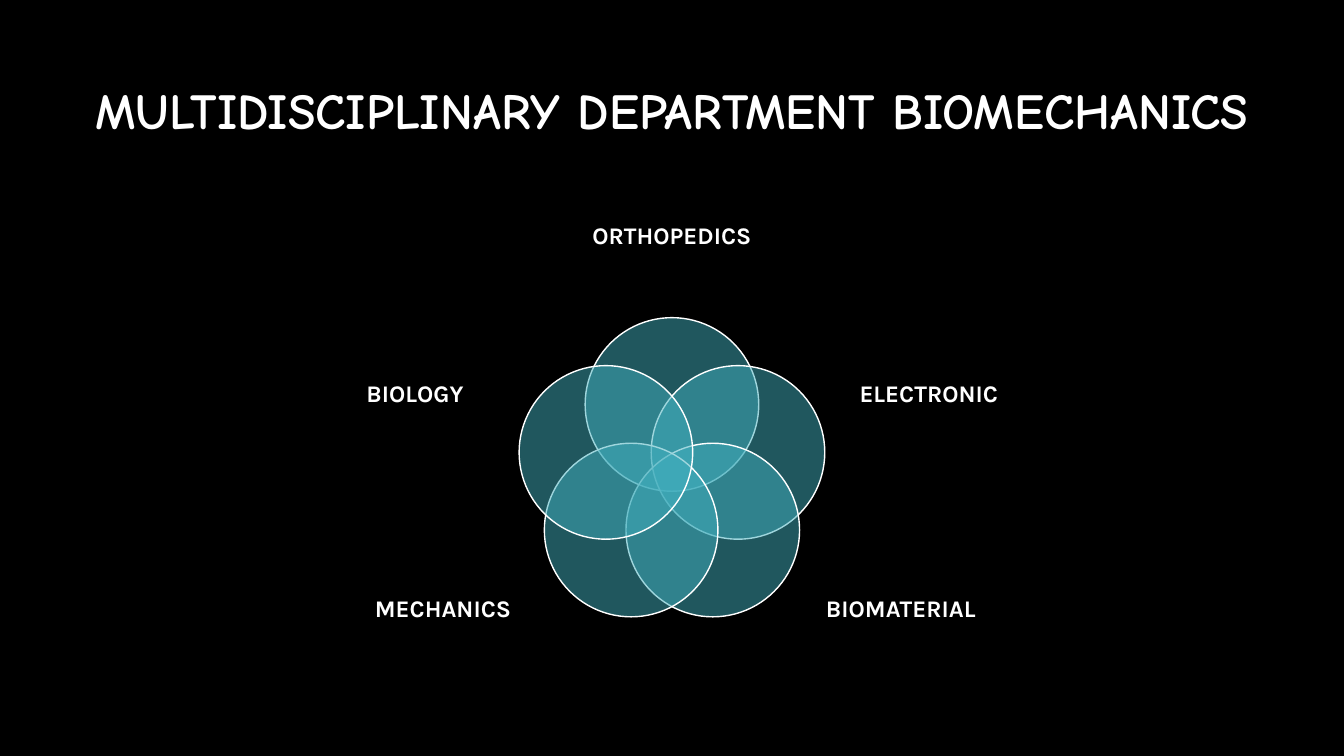
from math import cos, radians, sin

from lxml import etree
from pptx import Presentation
from pptx.dml.color import RGBColor
from pptx.enum.shapes import MSO_SHAPE
from pptx.enum.text import MSO_ANCHOR, PP_ALIGN
from pptx.oxml.ns import qn
from pptx.util import Pt

OVAL = MSO_SHAPE.OVAL
MIDDLE = MSO_ANCHOR.MIDDLE
CENTER = PP_ALIGN.CENTER

COLORS = {"background": "000000", "text": "FFFFFF", "outline": "FFFFFF", "circle": "41AEBD"}


def rgb(name):
    return RGBColor.from_string(COLORS[name])


def add_text(text, x, y, w, h, font, size, spacing=1.0):
    """Add a centred bold text box whose middle is at x, y."""
    sp = s.shapes.add_textbox(Pt(x - w / 2), Pt(y - h / 2), Pt(w), Pt(h))
    tf = sp.text_frame
    tf.word_wrap = True
    tf.vertical_anchor = MIDDLE
    tf.margin_left = tf.margin_right = tf.margin_top = tf.margin_bottom = 0
    p = tf.paragraphs[0]
    p.alignment = CENTER
    p.line_spacing = spacing
    r = p.add_run()
    r.text = text
    r.font.name = font
    r.font.size = Pt(size)
    r.font.bold = True
    r.font.color.rgb = rgb("text")


prs = Presentation()
prs.slide_width, prs.slide_height = Pt(960), Pt(540)
s = prs.slides.add_slide(prs.slide_layouts[6])
s.background.fill.solid()
s.background.fill.fore_color.rgb = rgb("background")

# Title
add_text("MULTIDISCIPLINARY DEPARTMENT BIOMECHANICS", 480, 81, 864, 90,
         "Comic Neue", 36, spacing=0.9)

# Venn diagram: circles spaced evenly round a ring, clockwise from the top
CENTER_X, CENTER_Y = 480, 338.5
RING, DIAMETER = 49.6, 124
disciplines = [  # name, label middle x and y
    ("ORTHOPEDICS", 480, 168),
    ("ELECTRONIC", 663.5, 280.5),
    ("BIOMATERIAL", 643.5, 434.5),
    ("MECHANICS", 316.5, 434.5),
    ("BIOLOGY", 296.5, 280.5),
]
for i, (name, label_x, label_y) in enumerate(disciplines):
    angle = radians(i * 360 / len(disciplines))
    left = CENTER_X + RING * sin(angle) - DIAMETER / 2
    top = CENTER_Y - RING * cos(angle) - DIAMETER / 2
    sp = s.shapes.add_shape(OVAL, Pt(left), Pt(top), Pt(DIAMETER), Pt(DIAMETER))
    sp.shadow.inherit = False
    sp.fill.solid()
    sp.fill.fore_color.rgb = rgb("circle")
    sp.line.color.rgb = rgb("outline")
    sp.line.width = Pt(1)
    # Half transparent fill
    fill_color = sp._element.spPr.find(qn("a:solidFill")).find(qn("a:srgbClr"))
    etree.SubElement(fill_color, qn("a:alpha")).set("val", "50000")

    add_text(name, label_x, label_y, 144, 90, "Karla", 17)

prs.save("out.pptx")
